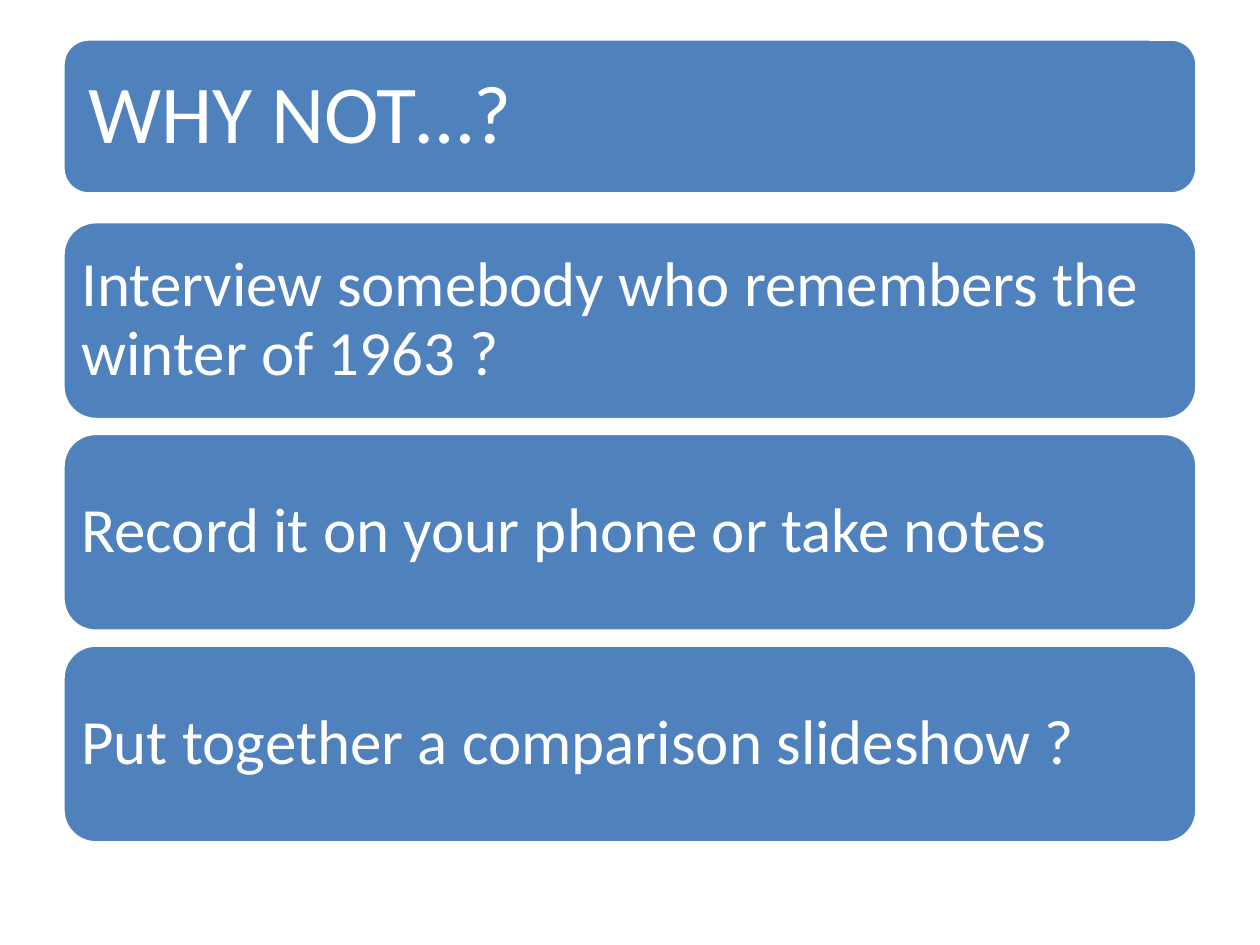
from pptx import Presentation
from pptx import util as u
from pptx.dml.color import RGBColor
from pptx.enum import shapes, text

TITLE = "WHY NOT…?"
IDEAS = [
    "Interview somebody who remembers the winter of 1963 ?",
    "Record it on your phone or take notes",
    "Put together a comparison slideshow ?",
]
BLUE, WHITE = "4F81BD", "FFFFFF"
LEFT, WIDTH = 0.5, 9
TOP, HIGH, STEP = 1.76, 1.57, 1.68  # idea bars


def color(code):
    return RGBColor.from_string(code)


def add_bar(slide, words, top, high, size, inset):
    bar = slide.shapes.add_shape(
        shapes.MSO_SHAPE.ROUNDED_RECTANGLE,
        u.Inches(LEFT), u.Inches(top), u.Inches(WIDTH), u.Inches(high))
    bar.shadow.inherit = False
    bar.fill.solid()
    bar.fill.fore_color.rgb = color(BLUE)
    bar.line.color.rgb = color(WHITE)
    bar.line.width = u.Pt(2)

    # Text, inset from the left and right edges
    frame = bar.text_frame
    frame.text = words
    frame.word_wrap = True
    frame.vertical_anchor = text.MSO_ANCHOR.MIDDLE
    frame.margin_left = frame.margin_right = u.Inches(inset)
    frame.margin_top = frame.margin_bottom = u.Inches(inset)
    para = frame.paragraphs[0]
    para.alignment = text.PP_ALIGN.LEFT
    para.line_spacing = 0.9
    font = para.runs[0].font
    font.name = "Calibri"
    font.size = u.Pt(size)
    font.color.rgb = color(WHITE)


def main():
    deck = Presentation()
    deck.slide_width, deck.slide_height = u.Inches(10), u.Inches(7.5)
    slide = deck.slides.add_slide(deck.slide_layouts[6])

    # Title bar, then evenly spaced ideas
    add_bar(slide, TITLE, 0.31, 1.23, 47, 0.14)
    for row, idea in enumerate(IDEAS):
        add_bar(slide, idea, TOP + row * STEP, HIGH, 36, 0.07)

    deck.save("out.pptx")


if __name__ == "__main__":
    main()
